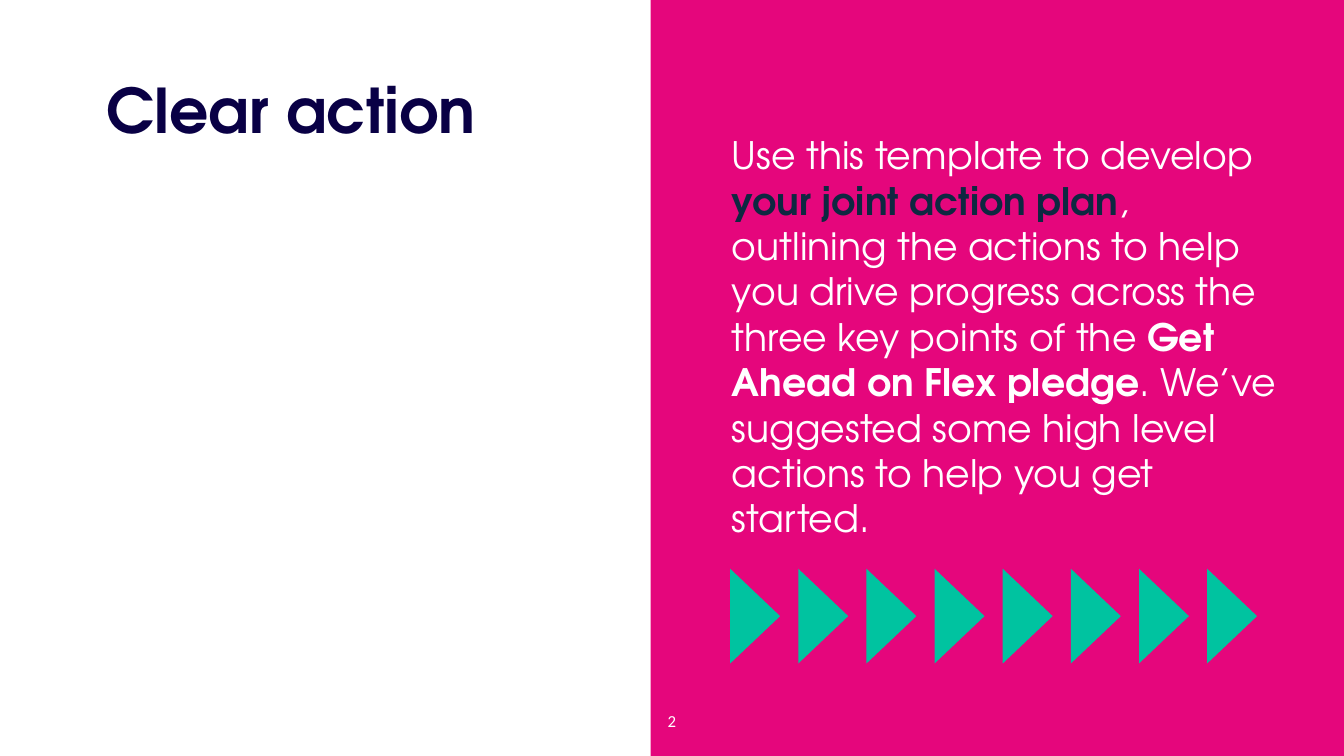
"""Build the action plan slide with its pink panel and row of arrows."""
from pptx import Presentation
from pptx.dml.color import RGBColor
from pptx.enum.shapes import MSO_SHAPE
from pptx.enum.text import MSO_ANCHOR, PP_ALIGN
from pptx.util import Inches, Pt

RECT = MSO_SHAPE.RECTANGLE
TRI = MSO_SHAPE.ISOSCELES_TRIANGLE
TOP, MID = MSO_ANCHOR.TOP, MSO_ANCHOR.MIDDLE
LEFT, CENTER = PP_ALIGN.LEFT, PP_ALIGN.CENTER
HUES = {"navy": "090045", "ink": "0E2841", "pink": "E5067C",
        "green": "00C3A0", "white": "FFFFFF"}
HEAD, PLAIN = "TeX Gyre Adventor", "Calibri"


def hue(name):
    return RGBColor.from_string(HUES[name])


class Deck:
    """Holds the style and the slide, measured on a grid of 100 by 100."""

    def __init__(self, wide, high):
        self.prs = Presentation()
        self.prs.slide_width = Inches(wide)
        self.prs.slide_height = Inches(high)
        self.col = self.prs.slide_width / 100
        self.row = self.prs.slide_height / 100
        self.slide = self.prs.slides.add_slide(self.prs.slide_layouts[6])

    def place(self, x, y, w, h):
        return (round(x * self.col), round(y * self.row),
                round(w * self.col), round(h * self.row))

    def shape(self, kind, box, fill, turn=0, group=None):
        home = (group or self.slide).shapes
        item = home.add_shape(kind, *self.place(*box))
        item.shadow.inherit = False
        item.fill.solid()
        item.fill.fore_color.rgb = hue(fill)
        item.line.fill.background()
        item.rotation = turn

    def arrows(self, count, box, step, fill):
        group = self.slide.shapes.add_group_shape()
        x, y, w, h = box
        for i in range(count):
            self.shape(TRI, (x + i * step, y, w, h), fill, 90, group)

    def text(self, box, runs, size, face, inset=(0, 0, 0, 0),
             anchor=TOP, align=LEFT, space=None):
        frame = self.slide.shapes.add_textbox(*self.place(*box)).text_frame
        frame.word_wrap = True
        frame.vertical_anchor = anchor
        (frame.margin_left, frame.margin_top, frame.margin_right,
         frame.margin_bottom) = map(Inches, inset)
        para = frame.paragraphs[0]
        para.alignment = align
        para.line_spacing = space
        para.font.size = Pt(size)
        para.font.name = face
        for words, tint, bold in runs:
            run = para.add_run()
            run.text = words
            run.font.color.rgb = hue(tint)
            run.font.bold = bold

    def save(self):
        self.prs.save("out.pptx")


def main():
    deck = Deck(26.66, 15)
    deck.text((7.91, 10.67, 40.51, 9.4), [("Clear action", "navy", True)],
              88, HEAD, (0, 0, 0, 0.05), space=0.9)
    deck.shape(RECT, (48.42, 0, 51.58, 100), "pink")
    deck.arrows(8, (52.66, 78.2, 7.05, 6.6), 5.07, "green")
    deck.text((0, 92.67, 100, 5.33), [("2", "white", False)],
              24, PLAIN, (0.1, 0.05, 0.1, 0.05), MID, CENTER)
    deck.text((54.31, 17.47, 41.86, 60.4), [
        ("Use this template to develop ", "white", False),
        ("your joint action plan", "ink", True),
        (", outlining the actions to help you drive progress across "
         "the three key points of the ", "white", False),
        ("Get Ahead on Flex pledge", "white", True),
        (". We’ve suggested some high level actions to help you get "
         "started.", "white", False),
    ], 54, HEAD, (0.04, 0, 0, 0))
    deck.save()


if __name__ == "__main__":
    main()
